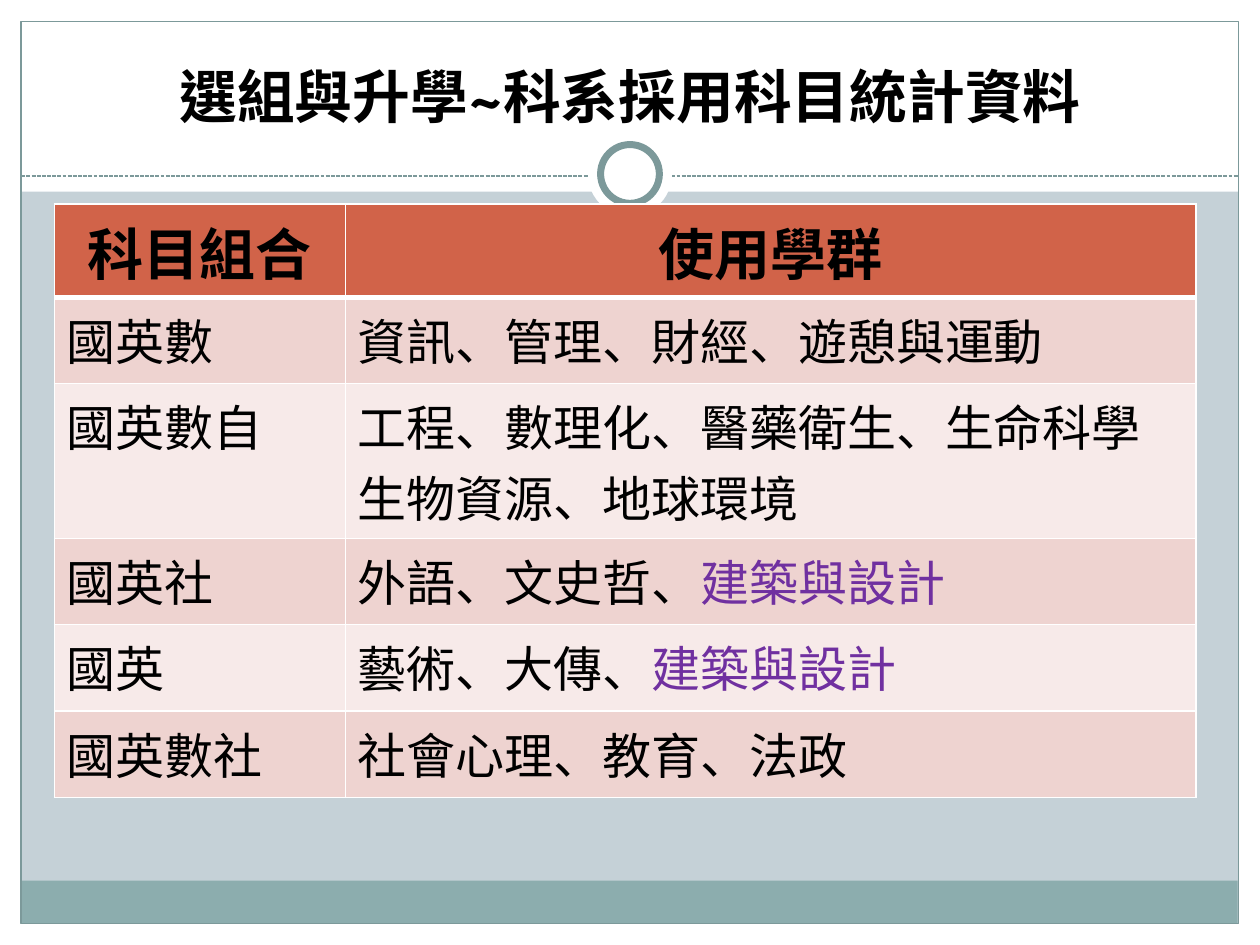
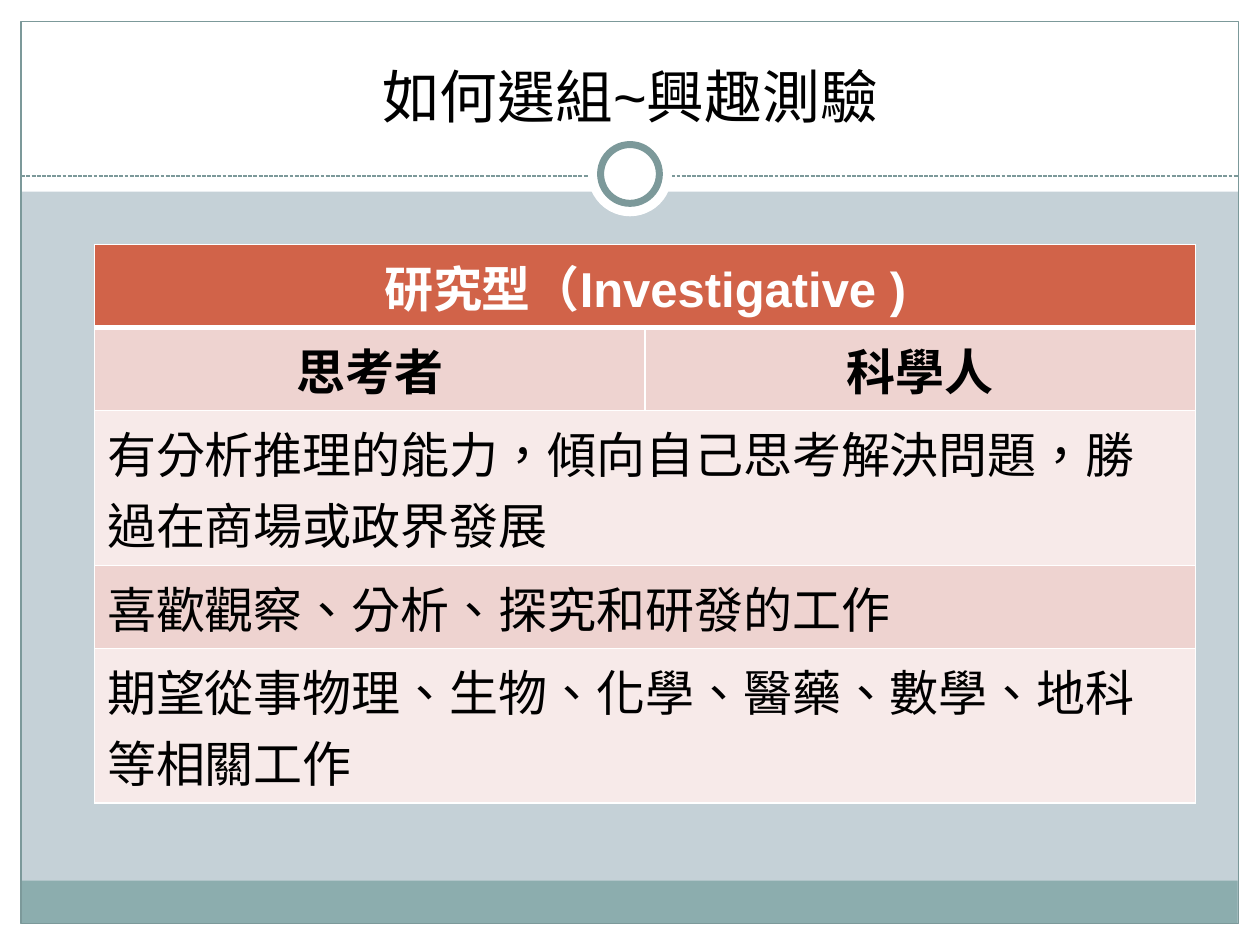
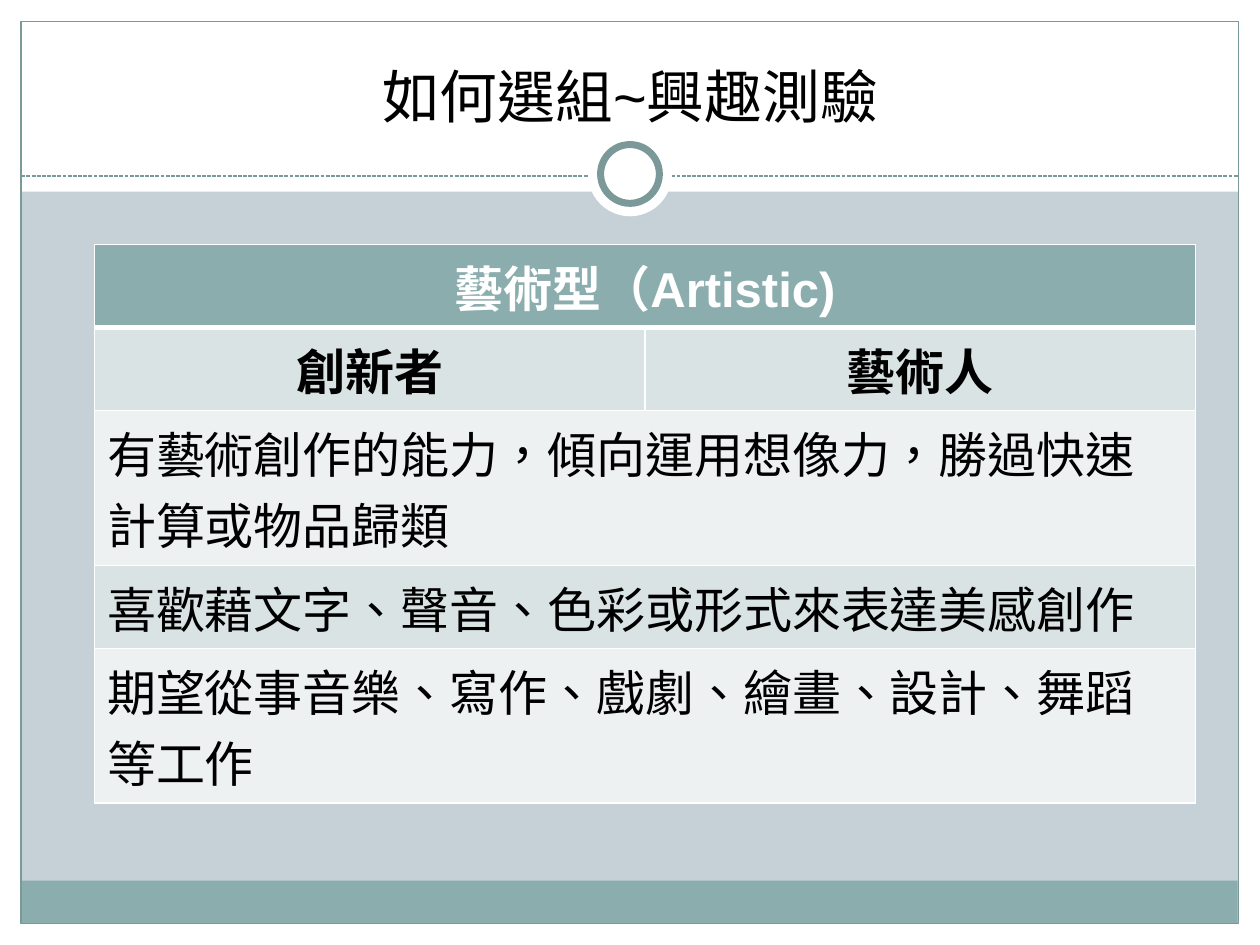
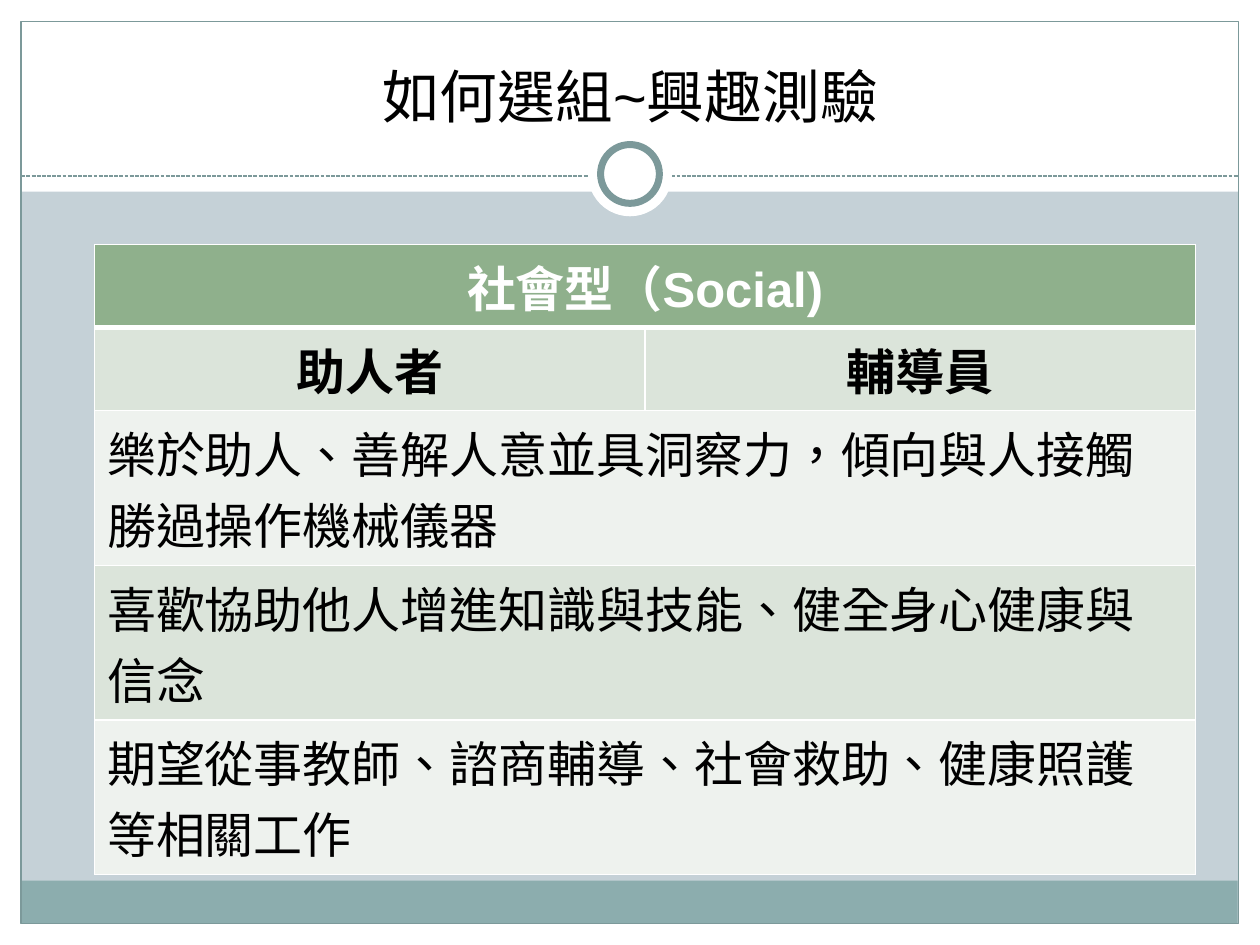
from dataclasses import dataclass
from lxml.etree import SubElement
from pptx import Presentation
from pptx.dml.color import RGBColor
from pptx.enum.dml import MSO_LINE
from pptx.enum.lang import MSO_LANGUAGE_ID
from pptx.enum.shapes import MSO_CONNECTOR, MSO_SHAPE
from pptx.enum.text import MSO_ANCHOR, PP_ALIGN
from pptx.oxml.ns import qn
from pptx.util import Pt


@dataclass(frozen=True)
class Theme:
    background: str = "C5D1D7"
    white: str = "FFFFFF"
    black: str = "000000"
    teal: str = "8CADAE"
    outline: str = "7C999A"
    accent: str = "7030A0"
    red_table: tuple = ("D16349", "EED3D0", "F7EAE9")
    teal_table: tuple = ("8CADAE", "DAE3E3", "EEF1F2")
    green_table: tuple = ("8FB08C", "DBE4DA", "EEF2EE")
    sans: str = "Arial"
    serif: str = "TeX Gyre Schola"
    chinese: str = "Noto Sans CJK SC"
    title_size: int = 33
    header_size: int = 32
    body_size: int = 28


theme = Theme()
accent_text = "建築與設計"
one_line = 47.5
two_lines = 88.4
subject_line = 49.4


def write(text_frame, text, font, size, color, bold=False, centered=False):
    text_frame.text = text
    for paragraph in text_frame.paragraphs:
        paragraph.alignment = PP_ALIGN.CENTER if centered else PP_ALIGN.LEFT
        before, accent, after = paragraph.text.partition(accent_text)
        if accent:
            paragraph.text = before
            paragraph.add_run().text = accent
        for run in paragraph.runs:
            run.font.name = font
            run.font.size = Pt(size)
            run.font.bold = bold
            run.font.color.rgb = RGBColor.from_string(theme.accent if run.text == accent_text else color)
            run.font.language_id = MSO_LANGUAGE_ID.TRADITIONAL_CHINESE
            if font == theme.chinese:
                run.font.language_id = MSO_LANGUAGE_ID.SIMPLIFIED_CHINESE
                SubElement(run.font._element, qn("a:ea"), typeface=font)


def add_borders(cell, top, bottom):
    properties = cell._tc.get_or_add_tcPr()
    for side, width in (("L", 1), ("R", 1), ("T", top), ("B", bottom)):
        line = SubElement(properties, qn(f"a:ln{side}"), w=str(Pt(width)))
        fill = SubElement(line, qn("a:solidFill"))
        SubElement(fill, qn("a:srgbClr"), val=theme.white)


frame_parts = [
    (MSO_SHAPE.RECTANGLE, 0, 527.8, 720, 12.2, theme.white, None),
    (MSO_SHAPE.RECTANGLE, 0, 0, 720, 109.6, theme.white, None),
    (MSO_SHAPE.RECTANGLE, 0, 0, 12, 540, theme.white, None),
    (MSO_SHAPE.RECTANGLE, 708, 0, 12, 540, theme.white, None),
    (MSO_SHAPE.RECTANGLE, 11.75, 503.3, 695.5, 24.5, theme.teal, None),
    (MSO_SHAPE.RECTANGLE, 12, 12.2, 695.6, 515.6, None, 0.75),
    (MSO_SHAPE.OVAL, 336, 75.6, 48, 48, theme.white, None),
    (MSO_SHAPE.OVAL, 343.2, 82.6, 33.6, 33.6, theme.white, 4),
]

subject_slide = {
    "title": "選組與升學~科系採用科目統計資料",
    "title_font": theme.serif,
    "title_bold": True,
    "origin": (31, 116.64),
    "columns": (166.32, 486),
    "heights": (53.2, subject_line, two_lines, subject_line, subject_line, subject_line),
    "colors": theme.red_table,
    "header_color": theme.black,
    "header_size": theme.header_size,
    "heading_rows": 1,
    "body_font": theme.chinese,
    "rows": [
        ("科目組合", "使用學群"),
        ("國英數", "資訊、管理、財經、遊憩與運動"),
        ("國英數自", "工程、數理化、醫藥衛生、生命科學\n生物資源、地球環境"),
        ("國英社", "外語、文史哲、建築與設計"),
        ("國英", "藝術、大傳、建築與設計"),
        ("國英數社", "社會心理、教育、法政"),
    ],
}

interest_base = {
    "title": "如何選組~興趣測驗",
    "title_font": theme.sans,
    "title_bold": False,
    "origin": (54, 139.7),
    "columns": (314.64, 314.64),
    "header_color": theme.white,
    "header_size": theme.body_size,
    "heading_rows": 2,
    "body_font": theme.sans,
}

interest_tables = [
    (theme.red_table, one_line, [
        ("研究型（Investigative )",),
        ("思考者", "科學人"),
        ("有分析推理的能力，傾向自己思考解決問題，勝過在商場或政界發展",),
        ("喜歡觀察、分析、探究和研發的工作",),
        ("期望從事物理、生物、化學、醫藥、數學、地科等相關工作",),
    ]),
    (theme.teal_table, one_line, [
        ("藝術型（Artistic)",),
        ("創新者", "藝術人"),
        ("有藝術創作的能力，傾向運用想像力，勝過快速計算或物品歸類",),
        ("喜歡藉文字、聲音、色彩或形式來表達美感創作",),
        ("期望從事音樂、寫作、戲劇、繪畫、設計、舞蹈等工作",),
    ]),
    (theme.green_table, two_lines, [
        ("社會型（Social)",),
        ("助人者", "輔導員"),
        ("樂於助人、善解人意並具洞察力，傾向與人接觸勝過操作機械儀器",),
        ("喜歡協助他人增進知識與技能、健全身心健康與信念",),
        ("期望從事教師、諮商輔導、社會救助、健康照護等相關工作",),
    ]),
]

slide_contents = [subject_slide] + [
    {**interest_base, "colors": colors, "rows": rows,
     "heights": (one_line, one_line, two_lines, likes_height, two_lines)}
    for colors, likes_height, rows in interest_tables
]

presentation = Presentation()
presentation.slide_width = Pt(720)
presentation.slide_height = Pt(540)

for content in slide_contents:
    slide = presentation.slides.add_slide(presentation.slide_layouts[6])
    slide.background.fill.solid()
    slide.background.fill.fore_color.rgb = RGBColor.from_string(theme.background)

    for kind, left, top, width, height, fill, line_width in frame_parts:
        if kind == MSO_SHAPE.OVAL and line_width is None:
            divider = slide.shapes.add_connector(
                MSO_CONNECTOR.STRAIGHT, Pt(12.2), Pt(100.6), Pt(707.8), Pt(100.6))
            divider.line.color.rgb = RGBColor.from_string(theme.outline)
            divider.line.width = Pt(0.75)
            divider.line.dash_style = MSO_LINE.SQUARE_DOT
            SubElement(divider._element.spPr, qn("a:effectLst"))
        shape = slide.shapes.add_shape(kind, Pt(left), Pt(top), Pt(width), Pt(height))
        shape.shadow.inherit = False
        if fill:
            shape.fill.solid()
            shape.fill.fore_color.rgb = RGBColor.from_string(fill)
        else:
            shape.fill.background()
        if line_width:
            shape.line.color.rgb = RGBColor.from_string(theme.outline)
            shape.line.width = Pt(line_width)
        else:
            shape.line.fill.background()

    title = slide.shapes.add_textbox(Pt(24), Pt(18), Pt(672), Pt(60))
    title.text_frame.word_wrap = True
    title.text_frame.vertical_anchor = MSO_ANCHOR.BOTTOM
    write(title.text_frame, content["title"], content["title_font"], theme.title_size,
          theme.black, content["title_bold"], centered=True)

    rows = content["rows"]
    left, top = content["origin"]
    table = slide.shapes.add_table(
        len(rows), 2, Pt(left), Pt(top),
        Pt(sum(content["columns"])), Pt(sum(content["heights"]))).table
    for column, width in zip(table.columns, content["columns"]):
        column.width = Pt(width)

    for row_index, (texts, height) in enumerate(zip(rows, content["heights"])):
        table.rows[row_index].height = Pt(height)
        header = row_index == 0
        heading = row_index < content["heading_rows"]
        header_fill, odd_fill, even_fill = content["colors"]
        row_fill = header_fill if header else odd_fill if row_index % 2 else even_fill
        for column_index in range(2):
            cell = table.cell(row_index, column_index)
            add_borders(cell, 3 if row_index == 1 else 1, 3 if header else 1)
            cell.fill.solid()
            cell.fill.fore_color.rgb = RGBColor.from_string(row_fill)
        if len(texts) == 1:
            table.cell(row_index, 0).merge(table.cell(row_index, 1))
        for column_index, text in enumerate(texts):
            font = theme.sans if heading else content["body_font"]
            write(table.cell(row_index, column_index).text_frame, text,
                  theme.serif if text == "藝術人" else font,
                  content["header_size"] if header else theme.body_size,
                  content["header_color"] if header else theme.black,
                  bold=heading, centered=heading)

presentation.save("out.pptx")
